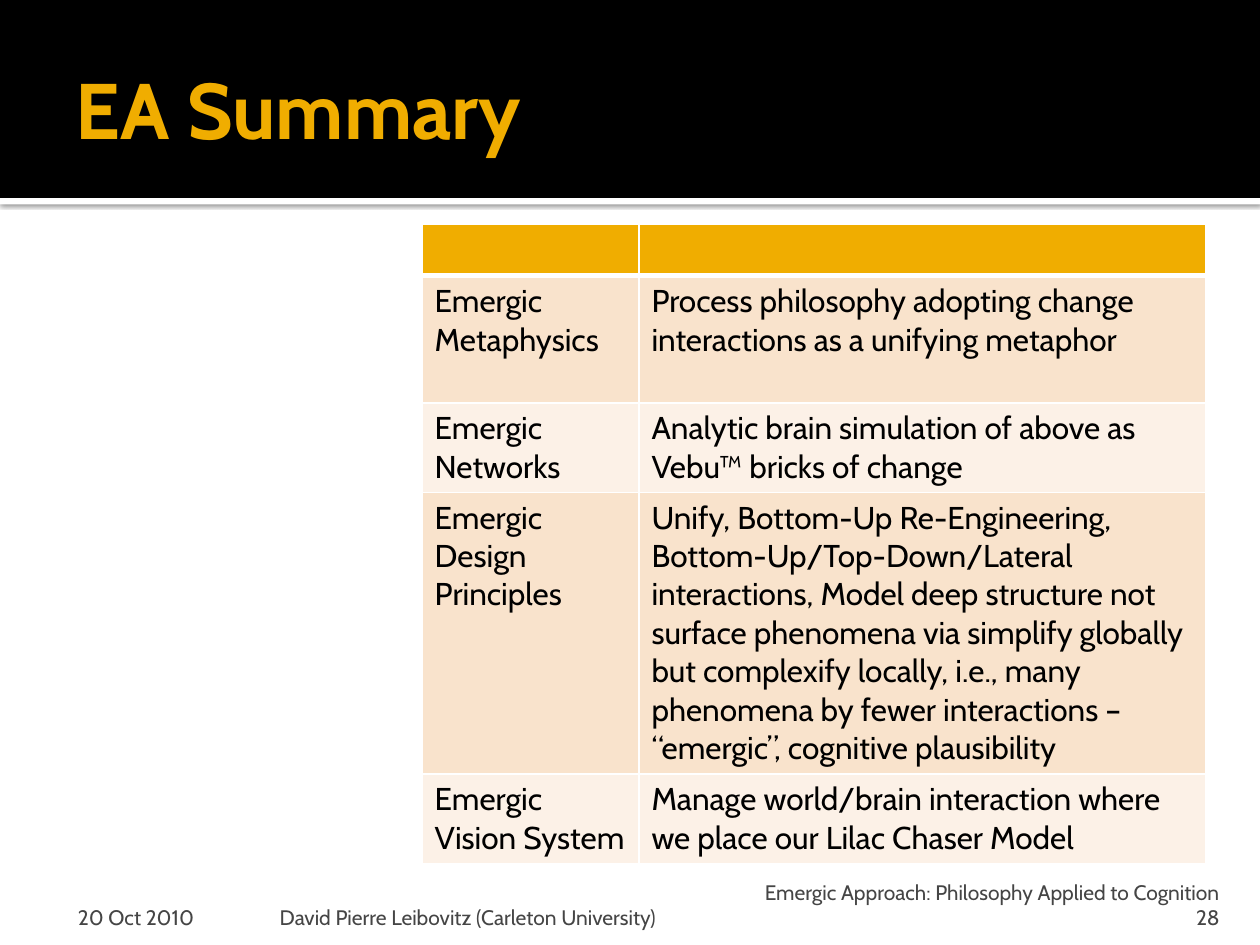
from dataclasses import dataclass

from lxml import etree
from pptx import Presentation
from pptx import util as u
from pptx.dml.color import RGBColor
from pptx.enum import shapes, text
from pptx.oxml import ns

Cm, Pt = u.Cm, u.Pt


@dataclass(frozen=True)
class Theme:
    font: str = "Cabin"
    gold: str = "F0AD00"
    black: str = "000000"
    white: str = "FFFFFF"
    grey: str = "454545"
    bands: tuple = ("F9E3CC", "FCF1E7")
    title_size: int = 45
    body_size: int = 18
    footer_size: int = 12


THEME = Theme()
BANNER_HEIGHT = 3.99

ROWS = [
    ("", ""),
    ("Emergic Metaphysics",
     "Process philosophy adopting change interactions as a unifying metaphor"),
    ("Emergic Networks",
     "Analytic brain simulation of above as Vebu™ bricks of change"),
    ("Emergic Design Principles",
     "Unify, Bottom-Up Re-Engineering, Bottom-Up/Top-Down/Lateral interactions, "
     "Model deep structure not surface phenomena via simplify globally but "
     "complexify locally, i.e., many phenomena by fewer interactions – "
     "“emergic”, cognitive plausibility"),
    ("Emergic Vision System",
     "Manage world/brain interaction where we place our Lilac Chaser Model"),
]
ROW_HEIGHTS = [1.04, 2.56, 1.8, 5.66, 1.8]
COLUMN_WIDTHS = [4.37, 11.43]

# Text, left, width, left inset, right inset, alignment
FOOTERS = [
    ("20 Oct 2010", 1.27, 3.02, 0.3, 0.13, text.PP_ALIGN.LEFT),
    ("David Pierre Leibovitz (Carleton University)",
     5.51, 8.23, 0.13, 0.13, text.PP_ALIGN.LEFT),
    ("Emergic Approach: Philosophy Applied to Cognition 28",
     14.71, 10.13, 0.25, 0.25, text.PP_ALIGN.RIGHT),
]


def assign(target, values):
    for name, value in values.items():
        setattr(target, name, value)


def write(frame, words, size, color, align=text.PP_ALIGN.LEFT, bold=False):
    para = frame.paragraphs[0]
    para.alignment = align
    span = para.add_run()
    span.text = words
    assign(span.font, {"name": THEME.font, "size": Pt(size), "bold": bold})
    span.font.color.rgb = RGBColor.from_string(color)


def add_band(page, top, height, color):
    """Add a plain rectangle across the full slide width."""
    band = page.shapes.add_shape(
        shapes.MSO_SHAPE.RECTANGLE, 0, Cm(top), Cm(25.4), Cm(height))
    band.shadow.inherit = False
    band.fill.solid()
    band.fill.fore_color.rgb = RGBColor.from_string(color)
    band.line.fill.background()
    return band


def drop_shadow(shape):
    effects = shape._element.spPr.find(ns.qn("a:effectLst"))
    shadow = etree.SubElement(
        effects, ns.qn("a:outerShdw"), blurRad=str(Pt(2.5)),
        dist=str(Pt(0.8)), dir="5400000", algn="t", rotWithShape="0")
    color = etree.SubElement(shadow, ns.qn("a:srgbClr"), val=THEME.black)
    etree.SubElement(color, ns.qn("a:alpha"), val="60000")


def add_title(page, words):
    title = page.shapes.title
    page.shapes._spTree.append(title._element)  # in front of the banner
    assign(title, {"left": Cm(1.27), "top": Cm(0.43),
                   "width": Cm(22.86), "height": Cm(3.48)})
    frame = title.text_frame
    assign(frame, {"margin_left": Cm(0.25), "margin_right": Cm(0.13),
                   "margin_top": Cm(0.13), "margin_bottom": Cm(0.13),
                   "vertical_anchor": text.MSO_ANCHOR.MIDDLE,
                   "auto_size": text.MSO_AUTO_SIZE.NONE})
    write(frame, words, THEME.title_size, THEME.gold, bold=True)


def set_borders(cell, widths):
    properties = cell._tc.get_or_add_tcPr()
    for side, width in widths.items():
        line = etree.SubElement(
            properties, ns.qn(f"a:ln{side}"), w=str(Pt(width)))
        fill = etree.SubElement(line, ns.qn("a:solidFill"))
        etree.SubElement(fill, ns.qn("a:srgbClr"), val=THEME.white)


def fill_cell(cell, row, words):
    set_borders(cell, {"L": 1, "R": 1, "T": 3 if row == 1 else 1,
                       "B": 3 if row == 0 else 1})
    color = THEME.bands[(row - 1) % 2] if row else THEME.gold
    cell.fill.solid()
    cell.fill.fore_color.rgb = RGBColor.from_string(color)
    if words:
        write(cell.text_frame, words, THEME.body_size, THEME.black)


def add_summary_table(page):
    table = page.shapes.add_table(
        len(ROWS), len(COLUMN_WIDTHS), Cm(8.51), Cm(4.52),
        Cm(sum(COLUMN_WIDTHS)), Cm(sum(ROW_HEIGHTS))).table
    for column, width in zip(table.columns, COLUMN_WIDTHS):
        column.width = Cm(width)
    for index, (row, height) in enumerate(zip(table.rows, ROW_HEIGHTS)):
        row.height = Cm(height)
        for cell, words in zip(row.cells, ROWS[index]):
            fill_cell(cell, index, words)


def add_footer(page, words, left, width, inset_left, inset_right, align):
    box = page.shapes.add_textbox(Cm(left), Cm(17.98), Cm(width), Cm(0.76))
    assign(box.text_frame, {
        "word_wrap": True, "vertical_anchor": text.MSO_ANCHOR.BOTTOM,
        "margin_left": Cm(inset_left), "margin_right": Cm(inset_right),
        "margin_top": Cm(0.13), "margin_bottom": 0})
    write(box.text_frame, words, THEME.footer_size, THEME.grey, align)


def main():
    deck = Presentation()
    assign(deck, {"slide_width": Cm(25.4), "slide_height": Cm(19.05)})
    page = deck.slides.add_slide(deck.slide_layouts.get_by_name("Title Only"))
    drop_shadow(add_band(page, BANNER_HEIGHT, 0.13, THEME.white))
    add_band(page, 0, BANNER_HEIGHT, THEME.black)
    add_title(page, "EA Summary")
    add_summary_table(page)
    for footer in FOOTERS:
        add_footer(page, *footer)
    deck.save("out.pptx")


if __name__ == "__main__":
    main()
